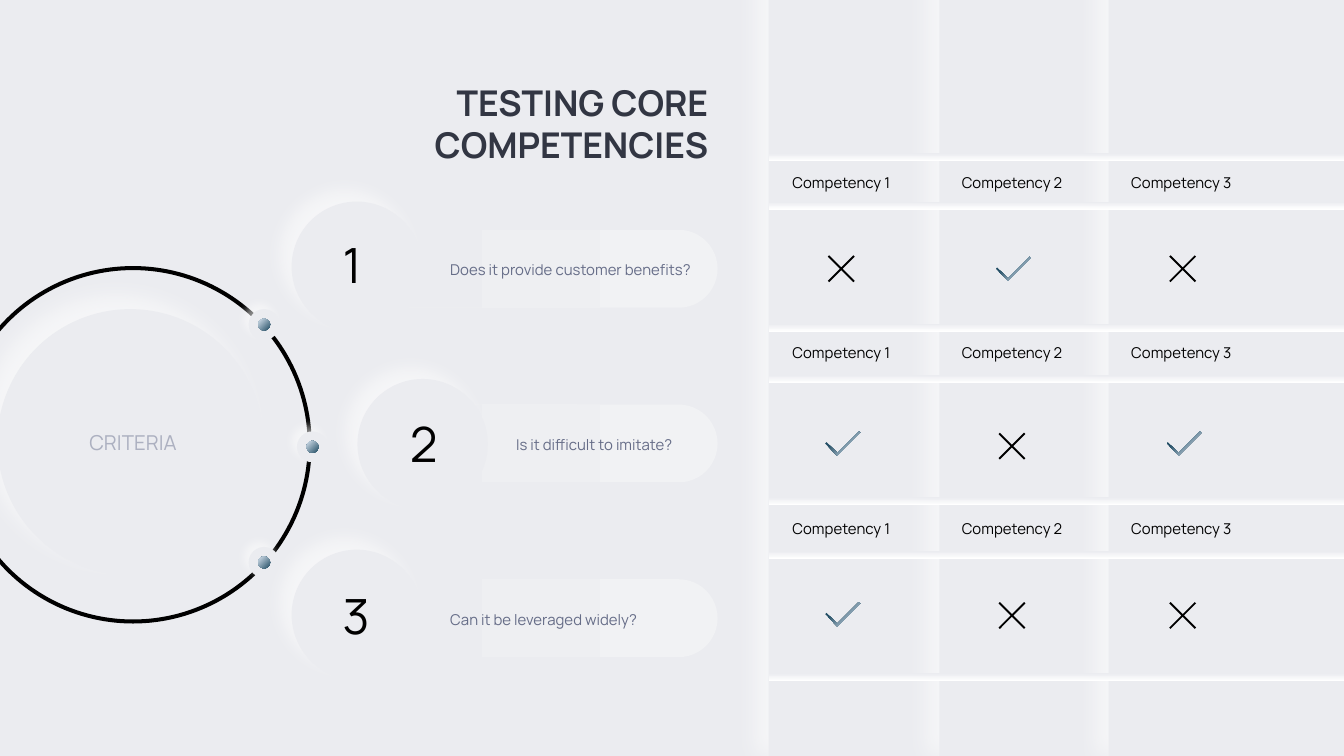
from lxml.etree import SubElement
from pptx import Presentation
from pptx.dml.color import RGBColor
from pptx.enum.shapes import MSO_SHAPE
from pptx.enum.text import MSO_ANCHOR, MSO_AUTO_SIZE, PP_ALIGN
from pptx.oxml.ns import qn
from pptx.util import Inches, Pt

# Content
TITLE = "TESTING CORE COMPETENCIES"
CRITERIA = [  # number, its box, circle left/top, question, its left/width, pill top
    ("1", (2.48, 1.71, 0.27, 0.51), 2.17, 1.5,
     "Does it provide customer benefits?", 3.28, 1.97, 1.71),
    ("2", (2.98, 3.04, 0.36, 0.51), 2.66, 2.82,
     "Is it difficult to imitate?", 3.77, 1.33, 3.01),
    ("3", (2.48, 4.32, 0.37, 0.51), 2.17, 4.09,
     "Can it be leveraged widely?", 3.28, 1.61, 4.31),
]
COMPETENCIES = ["Competency 1", "Competency 2", "Competency 3"]
RESULTS = [  # label top, check top, cross top, passed per competency
    (1.25, 1.91, 1.9, (False, True, False)),
    (2.52, 3.21, 3.22, (True, False, True)),
    (3.83, 4.48, 4.48, (True, False, False)),
]

# Layout and colours
COLUMN_LEFTS = (5.72, 6.99, 8.25)
MARK_LEFT, MARK_STEP = 6.14, 1.27
BAR_TOPS = (1.14, 1.5, 2.41, 2.79, 3.7, 4.1, 5.01)
DOTS = ((1.85, 2.3), (2.21, 3.21), (1.85, 4.07))
BACK, WHITE, BLACK = "EBECF0", "FFFFFF", "000000"
NAVY, ICE = "234E65", "DAE5F1"
CHECK = [(0.26, 0.01), (0.25, 0), (0.09, 0.16), (0.01, 0.08), (0, 0.09), (0.09, 0.18)]
CROSS = [(0.1, 0.09), (0.19, 0), (0.2, 0.01), (0.11, 0.1), (0.2, 0.19), (0.19, 0.2),
         (0.1, 0.11), (0.01, 0.2), (0, 0.19), (0.09, 0.1), (0, 0.01), (0.01, 0)]


def rgb(color):
    return RGBColor.from_string(color)


def paint(sp, fill, angle=0, stops=(0, 1)):
    """Fill with a hex colour, or a pair of them as a clockwise gradient."""
    sp.shadow.inherit = False
    sp.line.fill.background()
    if isinstance(fill, str):
        sp.fill.solid()
        sp.fill.fore_color.rgb = rgb(fill)
        return
    sp.fill.gradient()
    sp.fill.gradient_angle = (360 - angle) % 360
    for stop, color, position in zip(sp.fill.gradient_stops, fill, stops):
        stop.color.rgb = rgb(color)
        stop.position = position


def add_shape(kind, x, y, w, h, fill, angle=0):
    sp = s.shapes.add_shape(kind, Inches(x), Inches(y), Inches(w), Inches(h))
    paint(sp, fill, angle)
    return sp


def add_glow(sp, blur, dist):
    effects = sp._element.spPr.find(qn("a:effectLst"))
    glow = SubElement(effects, qn("a:outerShdw"), blurRad=str(Pt(blur)), dist=str(Pt(dist)),
                      dir="13500000", algn="br", rotWithShape="0")
    color = SubElement(glow, qn("a:srgbClr"), val=WHITE)
    SubElement(color, qn("a:alpha"), val="56000")


def add_text(text, x, y, w, h, size=8, color=BLACK, align=PP_ALIGN.LEFT,
             bold=False, sp=None):
    sp = sp or s.shapes.add_textbox(0, 0, 0, 0)
    sp.left, sp.top, sp.width, sp.height = map(Inches, (x, y, w, h))
    tf = sp.text_frame
    tf.word_wrap = True
    tf.auto_size = MSO_AUTO_SIZE.SHAPE_TO_FIT_TEXT
    tf.vertical_anchor = MSO_ANCHOR.TOP
    tf.margin_left = tf.margin_right = Inches(0.07)
    tf.margin_top = tf.margin_bottom = Inches(0.04)
    p = tf.paragraphs[0]
    p.alignment = align
    r = p.add_run()
    r.text = text
    r.font.name, r.font.size, r.font.bold = "Manrope", Pt(size), bold
    r.font.color.rgb = rgb(color)


def add_mark(points, x, y):
    corners = [(Inches(x + dx), Inches(y + dy)) for dx, dy in points]
    builder = s.shapes.build_freeform(*corners[0], scale=1.0)
    builder.add_line_segments(corners[1:], close=True)
    return builder.convert_to_shape()


prs = Presentation()
prs.slide_width = Inches(10)
prs.slide_height = prs.slide_width * 9 // 16
s = prs.slides.add_slide(prs.slide_layouts[5])
s.background.fill.solid()
s.background.fill.fore_color.rgb = rgb(BACK)

# Title
add_text(TITLE, 1.24, 0.56, 4.1, 0.72, size=19, color="323643", align=PP_ALIGN.RIGHT,
         bold=True, sp=s.shapes.title)

# Question pills
for *_, pill_top in CRITERIA:
    pill = add_shape(MSO_SHAPE.ROUNDED_RECTANGLE, 2.71, pill_top, 2.63, 0.58,
                     ("F1F2F4", BACK), 180)
    pill.adjustments[0] = 0.5

# Ring with its dots, and the disc inside it
ring = add_shape(MSO_SHAPE.DONUT, -0.34, 1.98, 2.66, 2.66, BLACK)
ring.adjustments[0] = 0.03 / 2.66
for x, y in DOTS:
    add_glow(add_shape(MSO_SHAPE.OVAL, x, y, 0.23, 0.23, BACK), 5, 4)
    add_shape(MSO_SHAPE.OVAL, x + 0.07, y + 0.07, 0.09, 0.09, (NAVY, ICE), 225)
add_glow(add_shape(MSO_SHAPE.OVAL, -0.02, 2.3, 1.98, 1.98, BACK), 12, 11)
add_text("CRITERIA", 0.48, 3.16, 1.02, 0.26, size=11, color="ACB0C0",
         align=PP_ALIGN.CENTER)

# Numbered criteria
for number, box, x, y, question, text_left, text_width, pill_top in CRITERIA:
    add_glow(add_shape(MSO_SHAPE.OVAL, x, y, 0.97, 0.97, BACK), 9, 9)
    add_text(number, *box, size=26)
    add_text(question, text_left, pill_top + 0.19, text_width, 0.35, color="656C87")

# Columns from right to left, so that each glow falls on the next gap
for x in reversed(COLUMN_LEFTS):
    add_glow(add_shape(MSO_SHAPE.RECTANGLE, x, -0.09, 1.07, 5.81, BACK), 12, 11)
for y in BAR_TOPS:
    add_shape(MSO_SHAPE.RECTANGLE, COLUMN_LEFTS[0], y, 4.28, 0.06, (WHITE, BACK), 270)

# Labels and marks
for label_top, check_top, cross_top, row in RESULTS:
    for i, (x, label, passed) in enumerate(zip(COLUMN_LEFTS, COMPETENCIES, row)):
        add_text(label, x + 0.08, label_top, 0.92, 0.34, align=PP_ALIGN.CENTER)
        mark_left = MARK_LEFT + i * MARK_STEP
        if passed:
            paint(add_mark(CHECK, mark_left, check_top), (NAVY, ICE), 45, (0.29, 0.88))
        else:
            paint(add_mark(CROSS, mark_left + 0.02, cross_top), BLACK)

prs.save("out.pptx")
